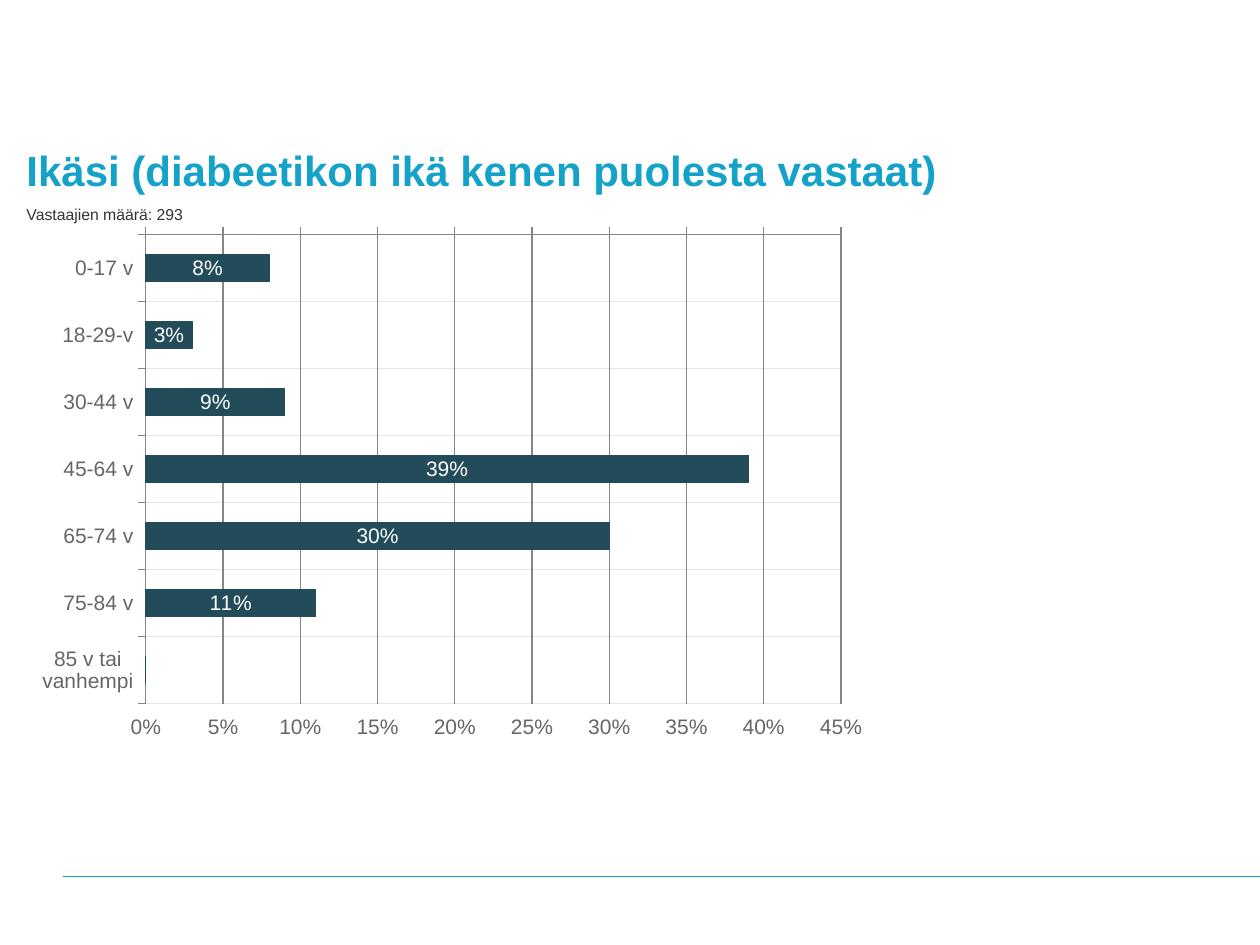
from lxml.etree import SubElement
from pptx import Presentation
from pptx.chart.data import CategoryChartData
from pptx.dml.color import RGBColor
from pptx.enum.chart import (
    XL_CHART_TYPE as ChartType,
    XL_LABEL_POSITION as LabelPosition,
    XL_TICK_LABEL_POSITION as TickLabels,
    XL_TICK_MARK as TickMark,
)
from pptx.enum.shapes import MSO_CONNECTOR as Connector
from pptx.enum.text import MSO_ANCHOR as Anchor, PP_ALIGN as Align
from pptx.oxml import parse_xml
from pptx.oxml.ns import nsdecls, qn
from pptx.util import Inches, Pt

COLORS = {
    "title": "14A2C9",
    "rule": "0FA1C9",
    "text": "333333",
    "axis_text": "666666",
    "axis": "868686",
    "row_grid": "E6E6E6",
    "bar": "234C5A",
    "bar_text": "FFFFFF",
}
AGE_SHARES = {
    "0-17 v": 0.08,
    "18-29-v": 0.03,
    "30-44 v": 0.09,
    "45-64 v": 0.39,
    "65-74 v": 0.3,
    "75-84 v": 0.11,
    "85 v tai vanhempi": 0,
}
PLOT_SHARES = {"x": 0.14, "y": 0.02, "w": 0.815, "h": 0.893}
LEFT = 0.021
TEXT_WIDTH = 0.959


class SurveySlide:
    """Holds the style and the slide; positions are shares of the slide's size."""

    font_name = "Arial"

    def __init__(self, presentation):
        self.width = presentation.slide_width
        self.height = presentation.slide_height
        self.slide = presentation.slides.add_slide(presentation.slide_layouts[5])

    def box(self, left, top, width, height):
        return (int(left * self.width), int(top * self.height),
                int(width * self.width), int(height * self.height))

    def set_font(self, font, size, color, bold=False):
        font.name = self.font_name
        font.size = Pt(size)
        font.bold = bold
        font.color.rgb = RGBColor.from_string(COLORS[color])

    def set_line(self, line, color, width):
        line.color.rgb = RGBColor.from_string(COLORS[color])
        line.width = Pt(width)

    def fill_text(self, shape, text, anchor, size, color, bold=False):
        frame = shape.text_frame
        frame.word_wrap = True
        frame.vertical_anchor = anchor
        frame.margin_left = frame.margin_right = 0
        frame.margin_top = frame.margin_bottom = 0
        frame.text = text
        paragraph = frame.paragraphs[0]
        paragraph.alignment = Align.LEFT
        self.set_font(paragraph.font, size, color, bold)

    def title(self, text, *place):
        shape = self.slide.shapes.title
        shape.left, shape.top, shape.width, shape.height = self.box(*place)
        self.fill_text(shape, text, Anchor.TOP, 24, "title", bold=True)

    def note(self, text, *place):
        shape = self.slide.shapes.add_textbox(*self.box(*place))
        self.fill_text(shape, text, Anchor.BOTTOM, 9, "text")

    def rule(self, left, top, width):
        x, y, length, _ = self.box(left, top, width, 0)
        line = self.slide.shapes.add_connector(
            Connector.STRAIGHT, x, y, x + length, y)
        self.set_line(line.line, "rule", 0.25)
        SubElement(line._element.spPr, qn("a:effectLst"))

    def axis(self, axis, grid_color):
        axis.has_major_gridlines = True
        self.set_line(axis.major_gridlines.format.line, grid_color, 0.75)
        self.set_line(axis.format.line, "axis", 0.75)
        axis.major_tick_mark = TickMark.OUTSIDE
        axis.minor_tick_mark = TickMark.NONE
        self.set_font(axis.tick_labels.font, 12, "axis_text")

    def bar_chart(self, shares, *place):
        data = CategoryChartData(number_format="0%")
        data.categories = list(shares)
        data.add_series("Series 1", list(shares.values()))
        chart = self.slide.shapes.add_chart(
            ChartType.BAR_CLUSTERED, *self.box(*place), data).chart
        chart.has_title = False
        chart.has_legend = False
        self.set_font(chart.font, 12, "axis_text")

        self.axis(chart.category_axis, "row_grid")
        chart.category_axis.reverse_order = True
        chart.category_axis.tick_label_position = TickLabels.LOW
        values = chart.value_axis
        self.axis(values, "axis")
        values.minimum_scale, values.maximum_scale = 0, 0.45
        values.major_unit = 0.05
        values.tick_label_position = TickLabels.HIGH
        values.tick_labels.number_format = "0%"
        values.tick_labels.number_format_is_linked = False

        plot = chart.plots[0]
        plot.gap_width = 150
        plot.vary_by_categories = False
        series = plot.series[0]
        series.format.fill.solid()
        series.format.fill.fore_color.rgb = RGBColor.from_string(COLORS["bar"])
        self.set_line(series.format.line, "bar", 0.75)
        labels = series.data_labels
        labels.show_value = True
        labels.position = LabelPosition.CENTER
        labels.number_format = "0%;;"
        labels.number_format_is_linked = False
        self.set_font(labels.font, 12, "bar_text")
        self.place_plot(chart)

    def place_plot(self, chart):
        """Fix the inner plot area at its shares of the chart."""
        area = chart._chartSpace.find(".//" + qn("c:plotArea"))
        for layout in area.findall(qn("c:layout")):
            area.remove(layout)
        modes = "".join(f'<c:{side}Mode val="edge"/>' for side in "xy")
        sizes = "".join(f'<c:{side} val="{share}"/>'
                        for side, share in PLOT_SHARES.items())
        area.insert(0, parse_xml(
            f'<c:layout {nsdecls("c")}><c:manualLayout>'
            f'<c:layoutTarget val="inner"/>{modes}{sizes}'
            f'</c:manualLayout></c:layout>'))


def main():
    presentation = Presentation()
    presentation.slide_width = Inches(10)
    presentation.slide_height = Inches(7.5)
    survey = SurveySlide(presentation)
    survey.rule(0.05, 0.927, 0.95)
    survey.title("Ikäsi (diabeetikon ikä kenen puolesta vastaat)",
                 LEFT, 0.153, TEXT_WIDTH, 0.053)
    survey.note("Vastaajien määrä: 293", LEFT, 0.197, TEXT_WIDTH, 0.04)
    survey.bar_chart(AGE_SHARES, LEFT, 0.237, 0.677, 0.556)
    presentation.save("out.pptx")


if __name__ == "__main__":
    main()
